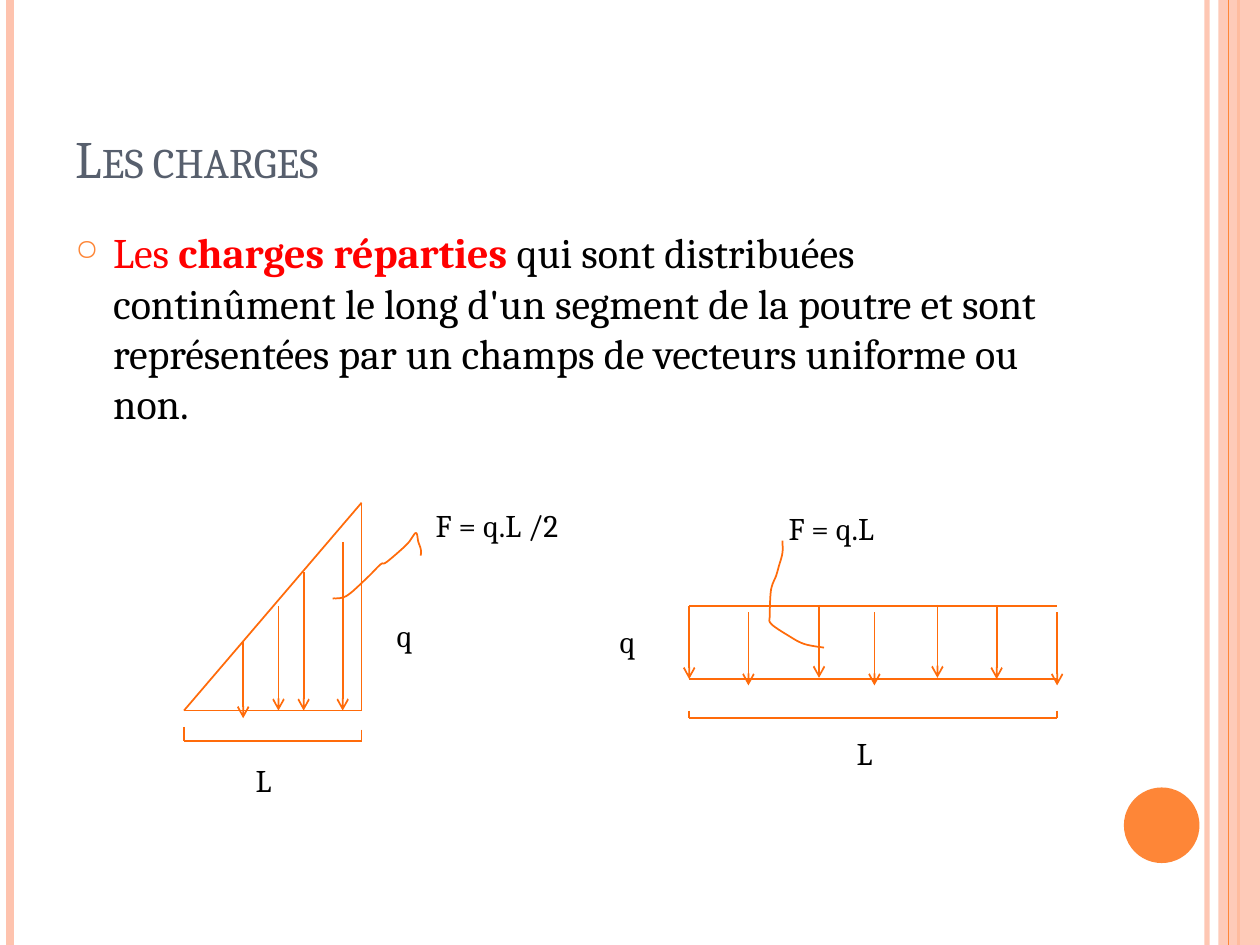
import pptx
import pptx.util
import pptx.dml.color
import pptx.enum.shapes
import pptx.enum.text
import pptx.oxml.ns
import lxml.etree

THEME = {
    "font": "Cambria", "head": 30, "body": 24, "note": 18, "thin": 1,
    "slate": "575F6D", "red": "FF0000", "black": "000000",
    "peach": "FEC3AE", "orange": "FE8637", "draw": "FF6B0A",
}
WIDE, HIGH = 10, 7.5

TITLE = "Les charges"
BODY = [
    ("Les ", "red", False),
    ("charges réparties ", "red", True),
    ("qui sont distribuées continûment le long d'un segment de la poutre et sont "
     "représentées par un champs de vecteurs uniforme ou non.", "black", False),
]
LABELS = [
    ("F = q.L /2", 3.36, 3.97, 1.56),
    ("L", 1.93, 5.99, 0.71),
    ("q", 3.05, 4.84, 0.39),
    ("F = q.L", 6.16, 3.99, 1.11),
    ("q", 4.82, 4.89, 0.5),
    ("L", 6.7, 5.78, 0.5),
]
RULES = [(9.58, "peach", 3, 93), (0.08, "peach", 4.5, 100), (9.83, "orange", 1.5, 100)]

RAMP = {"left": 1.46, "right": 2.87, "top": 3.99, "base": 5.64}
SLAB = {"left": 5.47, "right": 8.39, "top": 4.81, "base": 5.39}
RAMP_LOADS = [(2.72, 4.3, 5.64), (2.41, 4.54, 5.64), (2.21, 4.81, 5.64), (1.93, 5.09, 5.7)]
SLAB_LOADS = [(5.47, 4.81), (5.94, 4.86), (6.5, 4.8), (6.94, 4.86),
              (7.44, 4.8), (7.91, 4.81), (8.39, 4.86)]
SPANS = [(SLAB, 5.7, 5.64, 5.64), (RAMP, 5.88, 5.77, 5.79)]
LEADERS = [
    [(2.64, 4.75), (2.75, 4.73), (2.91, 4.59), (3.02, 4.48), (3.07, 4.46),
     (3.23, 4.32), (3.3, 4.23), (3.32, 4.3), (3.34, 4.36), (3.34, 4.41)],
    [(6.54, 5.14), (6.38, 5.11), (6.25, 5.04), (6.12, 4.95), (6.11, 4.88),
     (6.12, 4.68), (6.16, 4.57), (6.18, 4.5), (6.21, 4.39), (6.21, 4.29)],
]

inch = pptx.util.Inches
deck = pptx.Presentation()
deck.slide_width, deck.slide_height = inch(WIDE), inch(HIGH)
slide = deck.slides.add_slide(deck.slide_layouts[5])
shapes = slide.shapes


def node(parent, tag, **attrs):
    return lxml.etree.SubElement(parent, pptx.oxml.ns.qn("a:" + tag), attrs)


def tint(paint, name, alpha=100):
    paint.solid()
    paint.fore_color.rgb = pptx.dml.color.RGBColor.from_string(THEME[name])
    if alpha < 100:
        for color in paint._xPr.iter(pptx.oxml.ns.qn("a:srgbClr")):
            node(color, "alpha", val=str(alpha * 1000))


def line(x1, y1, x2, y2, color="draw", width=THEME["thin"], alpha=100, arrow=False):
    item = shapes.add_connector(pptx.enum.shapes.MSO_CONNECTOR.STRAIGHT,
                                inch(x1), inch(y1), inch(x2), inch(y2))
    item.line.width = pptx.util.Pt(width)
    tint(item.line.fill, color, alpha)
    if arrow:
        node(item.line._get_or_add_ln(), "tailEnd", type="arrow")
    node(item._element.spPr, "effectLst")


def block(kind, x, y, w, h, color, alpha=100):
    item = shapes.add_shape(kind, inch(x), inch(y), inch(w), inch(h))
    item.shadow.inherit = False
    tint(item.fill, color, alpha)
    item.line.fill.background()


def write(text, x, y, w, h, size="note", color="black", box=None, anchor="TOP", caps=False):
    box = box or shapes.add_textbox(0, 0, 0, 0)
    box.left, box.top, box.width, box.height = inch(x), inch(y), inch(w), inch(h)
    frame = box.text_frame
    frame.word_wrap = True
    frame.auto_size = pptx.enum.text.MSO_AUTO_SIZE.NONE
    frame.vertical_anchor = pptx.enum.text.MSO_ANCHOR[anchor]
    par = frame.paragraphs[0]
    par.alignment = pptx.enum.text.PP_ALIGN.LEFT
    parts = [(text, color, False)] if isinstance(text, str) else text
    for words, shade, bold in parts:
        run = par.add_run()
        run.text = words
        run.font.name, run.font.bold = THEME["font"], bold
        run.font.size = pptx.util.Pt(THEME[size])
        tint(run.font.fill, shade)
        if caps:
            run.font._element.set("cap", "small")
    return par


def bullet(par, sign, color, indent):
    par.space_before = pptx.util.Pt(6)
    props = par._p.get_or_add_pPr()
    props.set("marL", str(inch(indent)))
    props.set("indent", str(-inch(indent)))
    node(node(props, "buClr"), "srgbClr", val=THEME[color])
    node(props, "buSzPct", val="70000")
    node(props, "buChar", char=sign)


def smooth(points, steps=6):
    ends = [points[0], *points, points[-1]]
    for a, b, c, d in zip(ends, ends[1:], ends[2:], ends[3:]):
        for t in (n / steps for n in range(steps)):
            yield tuple(q + t * (r - p + t * (2 * p - 5 * q + 4 * r - s
                        + t * (3 * q - p - 3 * r + s))) / 2
                        for p, q, r, s in zip(a, b, c, d)) if t else b
    yield points[-1]


def curve(points):
    dots = [(inch(x), inch(y)) for x, y in smooth(points)]
    pen = shapes.build_freeform(*dots[0])
    pen.add_line_segments(dots[1:], close=False)
    item = pen.convert_to_shape()
    item.shadow.inherit = False
    item.fill.background()
    item.line.width = pptx.util.Pt(THEME["thin"])
    tint(item.line.fill, "draw")


kinds = pptx.enum.shapes.MSO_SHAPE
for x, color, width, alpha in RULES:
    line(x, 0, x, HIGH, color, width, alpha)
block(kinds.RECTANGLE, 9.67, 0, 0.33, HIGH, "peach", 87)
line(9.75, 0, 9.75, HIGH, "orange", 0.75)
block(kinds.OVAL, 8.92, 6.25, 0.6, 0.6, "orange")

write(TITLE, 0.5, 0.3, 8.17, 1.25, size="head", color="slate",
      box=shapes.title, anchor="BOTTOM", caps=True)
bullet(write(BODY, 0.5, 1.75, 8.17, 5.33, size="body"), "○", "orange", 0.3)

left, right, top, base = RAMP.values()
line(right, top, right, base)
line(right, base, left, base)
line(right, top, left, base)
for x, start, end in RAMP_LOADS:
    line(x, start, x, end, arrow=True)

left, right, top, base = SLAB.values()
for y in (base, top):
    line(left, y, right, y)
for x, start in SLAB_LOADS:
    line(x, start, x, start + base - top, arrow=True)

for points in LEADERS:
    curve(points)
for beam, y, first, last in SPANS:
    line(beam["left"], y, beam["right"], y)
    line(beam["left"], first, beam["left"], y)
    line(beam["right"], last, beam["right"], y)
for text, x, y, w in LABELS:
    write(text, x, y, w, 0.4)

deck.save("out.pptx")
